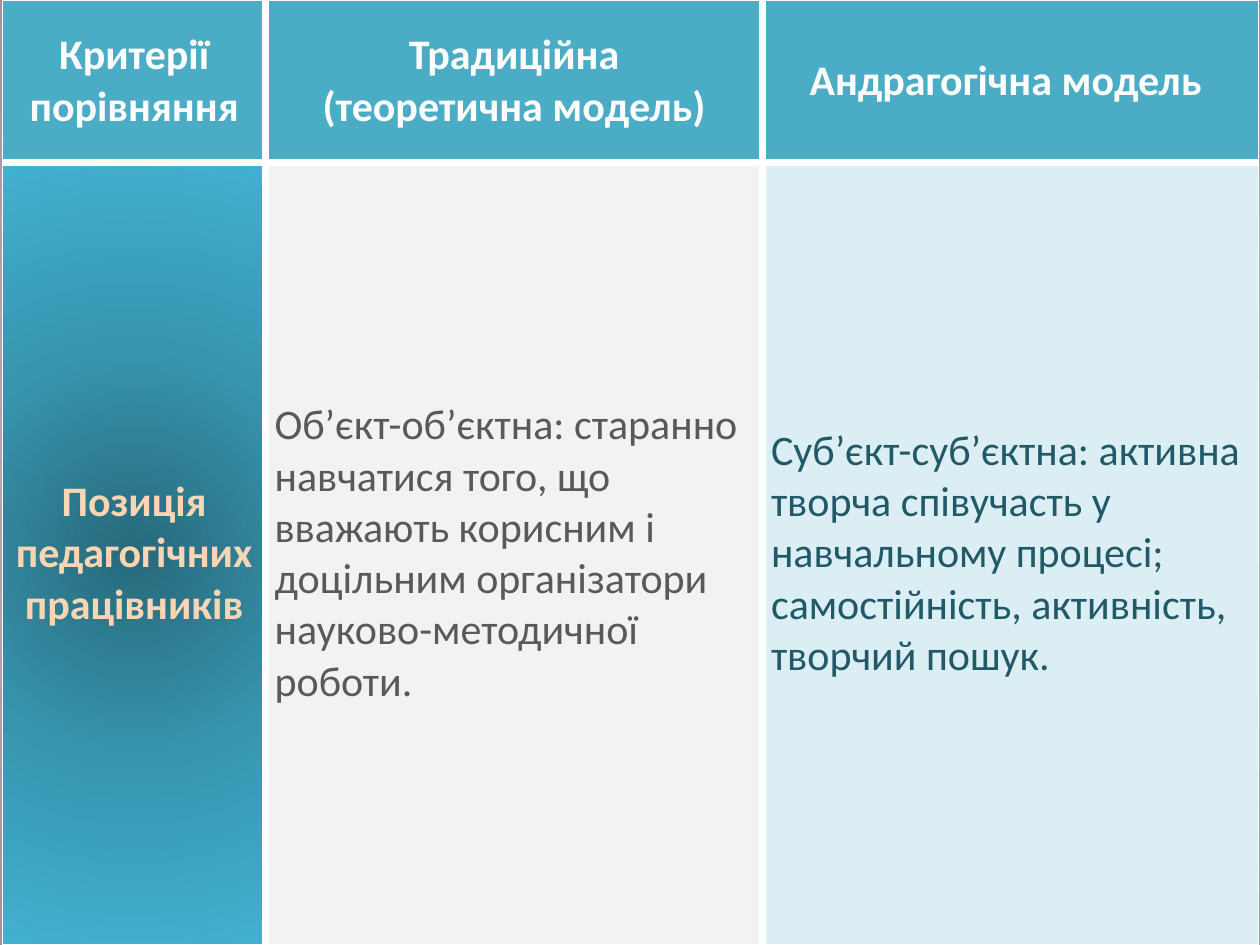
from lxml import etree
from pptx import Presentation
from pptx.dml.color import RGBColor
from pptx.enum.text import MSO_ANCHOR, PP_ALIGN
from pptx.oxml.ns import qn
from pptx.util import Inches, Pt

CENTER, LEFT = PP_ALIGN.CENTER, PP_ALIGN.LEFT
MIDDLE = MSO_ANCHOR.MIDDLE

WHITE = RGBColor(0xFF, 0xFF, 0xFF)
SILVER = RGBColor(0x97, 0x97, 0x97)
TEAL = RGBColor(0x4B, 0xAC, 0xC6)
PEACH = RGBColor(0xFC, 0xD5, 0xB5)
GRAY = RGBColor(0x59, 0x59, 0x59)
PALE_GRAY = RGBColor(0xF2, 0xF2, 0xF2)
DARK_TEAL = RGBColor(0x21, 0x59, 0x68)
PALE_TEAL = RGBColor(0xDB, 0xEE, 0xF4)
GLOW = [
    (0, RGBColor(0x27, 0x69, 0x7B)),
    (50, RGBColor(0x37, 0x95, 0xAF)),
    (100, RGBColor(0x42, 0xB1, 0xCF)),
]


def add_color(parent, color):
    etree.SubElement(parent, qn("a:srgbClr"), val=str(color))


def radial_fill(stops):
    gradient = etree.Element(qn("a:gradFill"), rotWithShape="1")
    stop_list = etree.SubElement(gradient, qn("a:gsLst"))
    for percent, color in stops:
        add_color(etree.SubElement(stop_list, qn("a:gs"), pos=str(percent * 1000)), color)
    circle = etree.SubElement(gradient, qn("a:path"), path="circle")
    etree.SubElement(circle, qn("a:fillToRect"), l="50000", t="50000", r="50000", b="50000")
    return gradient


prs = Presentation()
prs.slide_width, prs.slide_height = Inches(10), Inches(7.5)
slide = prs.slides.add_slide(prs.slide_layouts[6])

slide.background.fill.solid()
background = slide.element.find(".//" + qn("p:bgPr"))
background.replace(background[0], radial_fill([(0, WHITE), (100, SILVER)]))

column_widths = [2.09, 3.94, 3.94]
row_heights = [1.29, 6.21]
rows = [
    [
        (["Критерії порівняння"], WHITE, TEAL, True, CENTER),
        (["Традиційна", "(теоретична модель)"], WHITE, TEAL, True, CENTER),
        (["Андрагогічна модель "], WHITE, TEAL, True, CENTER),
    ],
    [
        (["Позиція педагогічних працівників"], PEACH, GLOW, True, CENTER),
        (["Об’єкт-об’єктна: старанно навчатися того, що вважають корисним і "
          "доцільним організатори науково-методичної роботи."], GRAY, PALE_GRAY, False, LEFT),
        (["Суб’єкт-суб’єктна: активна творча співучасть у навчальному процесі; "
          "самостійність, активність, творчий пошук."], DARK_TEAL, PALE_TEAL, False, LEFT),
    ],
]

comparison = slide.shapes.add_table(
    len(rows), len(column_widths), Inches(0.02), Inches(0),
    Inches(sum(column_widths)), Inches(sum(row_heights))).table
for column, width in zip(comparison.columns, column_widths):
    column.width = Inches(width)
for row, height in zip(comparison.rows, row_heights):
    row.height = Inches(height)

for r, row_content in enumerate(rows):
    for c, (lines, text_color, fill, bold, alignment) in enumerate(row_content):
        cell = comparison.cell(r, c)
        cell.vertical_anchor = MIDDLE
        cell.margin_left = cell.margin_right = Inches(0.07)
        cell.margin_top = cell.margin_bottom = Inches(0)

        for i, line in enumerate(lines):
            paragraph = cell.text_frame.paragraphs[0] if i == 0 else cell.text_frame.add_paragraph()
            paragraph.alignment = alignment
            run = paragraph.add_run()
            run.text = line
            run.font.name = "Calibri"
            run.font.size = Pt(24)
            run.font.bold = bold
            run.font.color.rgb = text_color

        properties = cell._tc.get_or_add_tcPr()
        outer_edges = {
            "a:lnL": c == 0,
            "a:lnR": c == len(column_widths) - 1,
            "a:lnT": r == 0,
            "a:lnB": r == len(rows) - 1,
        }
        for edge, is_outer in outer_edges.items():
            border = etree.SubElement(properties, qn(edge), w=str(Pt(1 if is_outer else 4.5)))
            add_color(etree.SubElement(border, qn("a:solidFill")), WHITE)

        if fill is GLOW:
            properties.append(radial_fill(GLOW))
        else:
            cell.fill.solid()
            cell.fill.fore_color.rgb = fill

prs.save("out.pptx")
